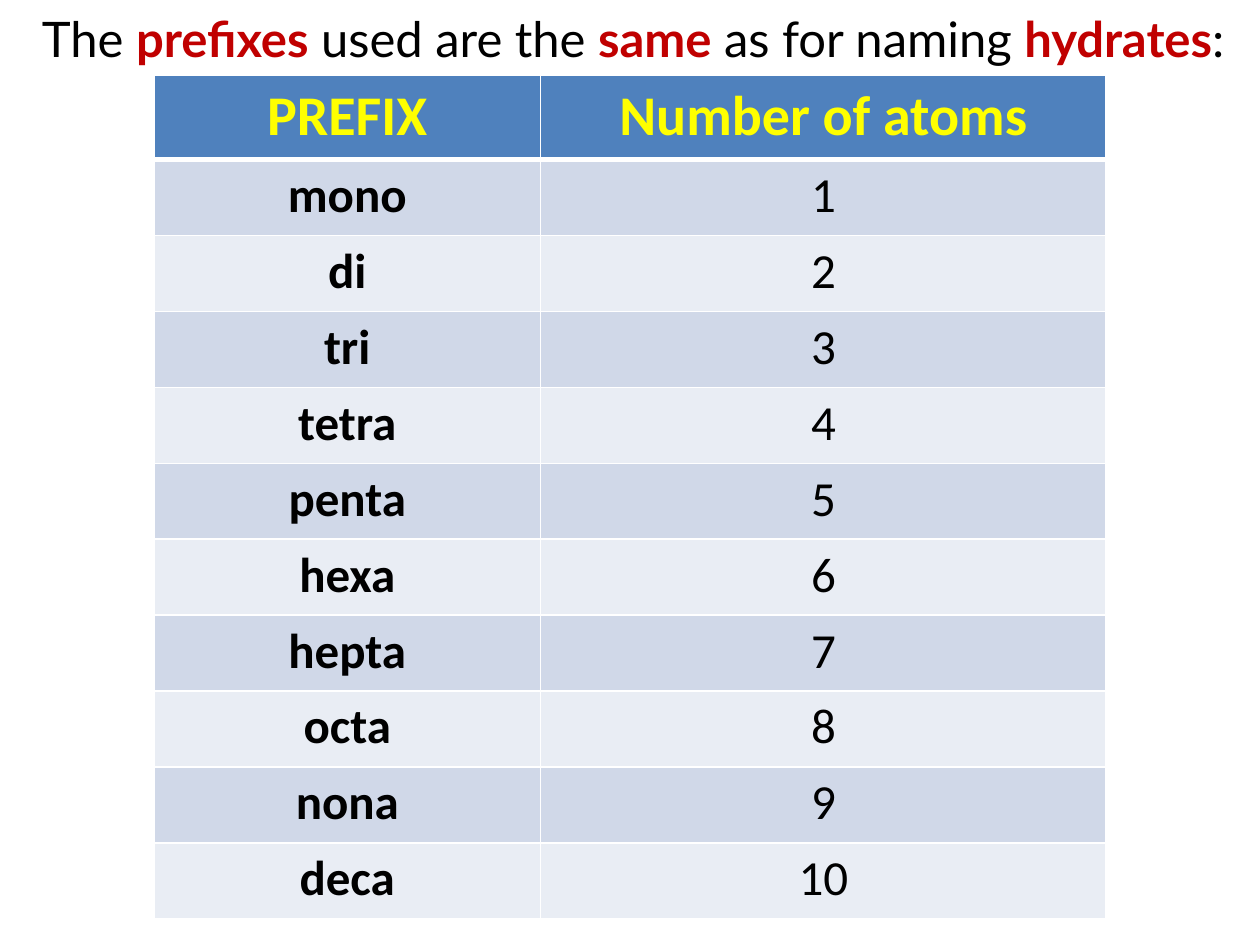
from lxml import etree
from pptx import Presentation
from pptx import util as u
from pptx.dml.color import RGBColor
from pptx.enum import text
from pptx.oxml.ns import qn

HUES = {
    "ink": "000000", "key": "C00000", "head": "4F81BD", "title": "FFFF00",
    "dark": "D0D8E8", "light": "E9EDF4", "rule": "FFFFFF",
}
PREFIXES = ["mono", "di", "tri", "tetra", "penta",
            "hexa", "hepta", "octa", "nona", "deca"]


def rgb(name):
    return RGBColor.from_string(HUES[name])


class Deck:
    def __init__(self):
        self.prs = Presentation()
        self.prs.slide_width, self.prs.slide_height = u.Cm(25.4), u.Cm(19.05)
        self.slide = self.prs.slides.add_slide(self.prs.slide_layouts[6])

    def style(self, run, face, size, hue, bold):
        font = run.font
        font.name, font.size, font.bold = face, u.Pt(size), bold
        font.color.rgb = rgb(hue)

    def line(self, parts, left, top, width, height):
        """Add one centred line; every second part is a key word."""
        box = self.slide.shapes.add_textbox(
            u.Cm(left), u.Cm(top), u.Cm(width), u.Cm(height))
        frame = box.text_frame
        frame.word_wrap = True
        frame.margin_left = u.Cm(0.38)
        para = frame.paragraphs[0]
        para.alignment = text.PP_ALIGN.CENTER
        for i, part in enumerate(parts):
            run = para.add_run()
            run.text = part
            key = i % 2 == 1
            self.style(run, "Lato", 28, "key" if key else "ink", key)

    def edge(self, cell, **widths):
        """Draw the cell's borders, with widths in points by side."""
        props = cell._tc.get_or_add_tcPr()
        for i, side in enumerate("LRTB"):
            line = etree.Element(qn(f"a:ln{side}"),
                                 w=str(u.Pt(widths.get(side, 1))))
            fill = etree.SubElement(line, qn("a:solidFill"))
            etree.SubElement(fill, qn("a:srgbClr"), val=HUES["rule"])
            props.insert(i, line)

    def cell(self, cell, words, fill, size, hue, bold):
        cell.text_frame.text = words
        para = cell.text_frame.paragraphs[0]
        para.alignment = text.PP_ALIGN.CENTER
        self.style(para.runs[0], "Calibri", size, hue, bold)
        cell.fill.solid()
        cell.fill.fore_color.rgb = rgb(fill)

    def table(self, rows, left, top, widths, heights):
        grid = self.slide.shapes.add_table(
            len(rows), len(widths), u.Cm(left), u.Cm(top),
            u.Cm(sum(widths)), u.Cm(sum(heights))).table
        for col, width in zip(grid.columns, widths):
            col.width = u.Cm(width)
        for r, row in enumerate(rows):
            grid.rows[r].height = u.Cm(heights[r])
            for c, words in enumerate(row):
                cell = grid.cell(r, c)
                if r == 0:
                    self.cell(cell, words, "head", 32, "title", True)
                    self.edge(cell, B=3)
                else:
                    band = "dark" if r % 2 else "light"
                    self.cell(cell, words, band, 28, "ink", c == 0)
                    self.edge(cell, T=3 if r == 1 else 1)


def main():
    deck = Deck()
    deck.line(["The ", "prefixes", " used are the ", "same",
               " as for naming ", "hydrates", ":"], 0, 0.05, 25.4, 1.22)
    rows = [("PREFIX", "Number of atoms")]
    rows += [(name, str(n)) for n, name in enumerate(PREFIXES, 1)]
    deck.table(rows, 3.1, 1.52, [7.8, 11.4], [1.7] + [1.53] * len(PREFIXES))
    deck.prs.save("out.pptx")


if __name__ == "__main__":
    main()
